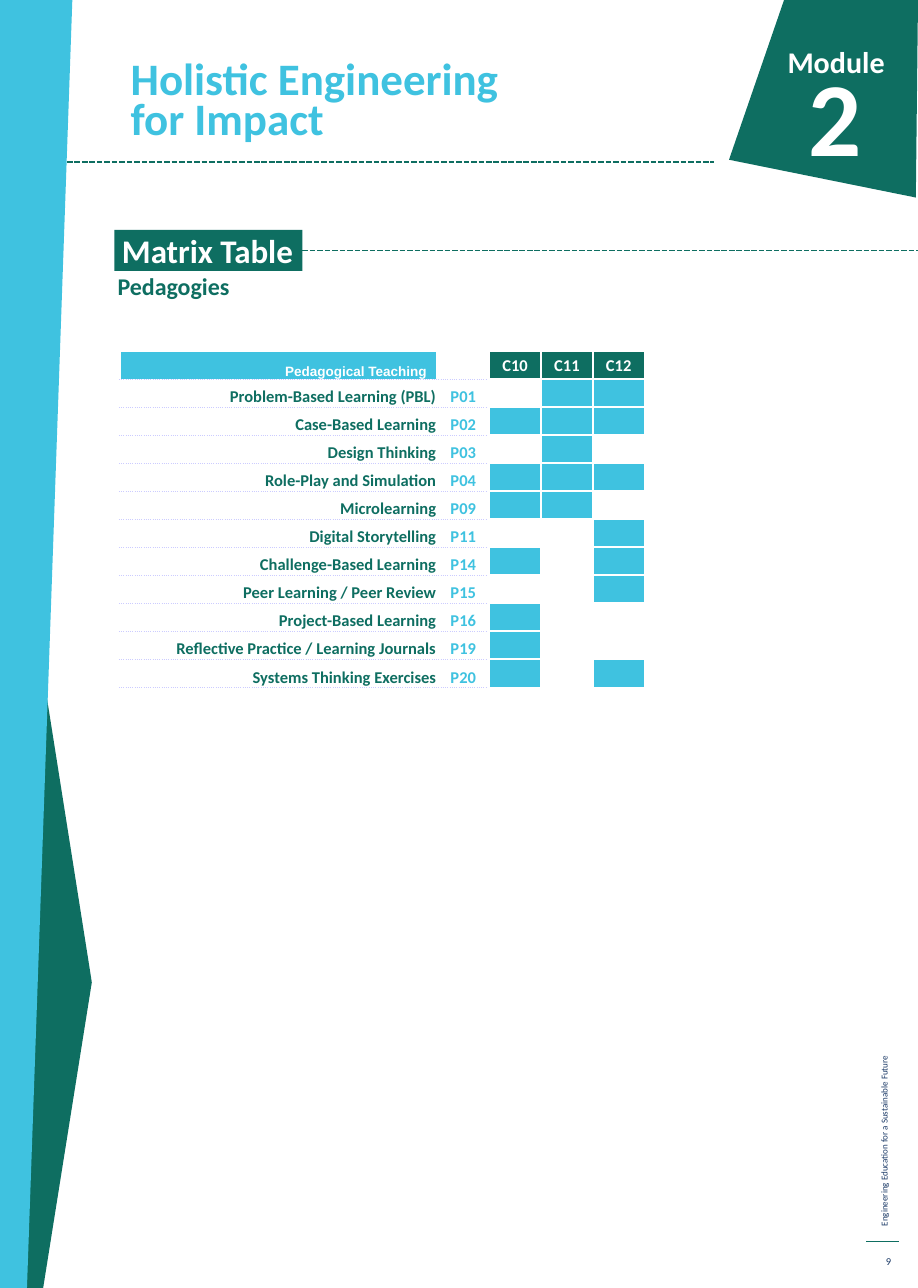
from lxml import etree
from pptx import Presentation
from pptx.dml.color import RGBColor
from pptx.enum.dml import MSO_LINE
from pptx.enum.shapes import MSO_CONNECTOR, MSO_SHAPE
from pptx.enum.text import MSO_ANCHOR, MSO_AUTO_SIZE, PP_ALIGN
from pptx.oxml.ns import qn
from pptx.util import Inches, Pt

GREEN = RGBColor(0x0E, 0x6E, 0x61)
BLUE = RGBColor(0x3F, 0xC2, 0xE0)
NAVY = RGBColor(0x1A, 0x39, 0x66)
WHITE = RGBColor(0xFF, 0xFF, 0xFF)
LILAC = RGBColor(0xCC, 0xCC, 0xFF)

LEFT, CENTER, RIGHT = PP_ALIGN.LEFT, PP_ALIGN.CENTER, PP_ALIGN.RIGHT
TOP, MIDDLE, BOTTOM = MSO_ANCHOR.TOP, MSO_ANCHOR.MIDDLE, MSO_ANCHOR.BOTTOM
NO_AUTOFIT = MSO_AUTO_SIZE.NONE
STRAIGHT = MSO_CONNECTOR.STRAIGHT
RECTANGLE = MSO_SHAPE.RECTANGLE
SHORT_DASH = MSO_LINE.SQUARE_DOT
RIGHT_SIDE = 3

COURSES = ["C10", "C11", "C12"]
PEDAGOGIES = [
    ("Problem-Based Learning (PBL)", "P01", ["C11", "C12"]),
    ("Case-Based Learning", "P02", ["C10", "C11", "C12"]),
    ("Design Thinking", "P03", ["C11"]),
    ("Role-Play and Simulation", "P04", ["C10", "C11", "C12"]),
    ("Microlearning", "P09", ["C10", "C11"]),
    ("Digital Storytelling", "P11", ["C12"]),
    ("Challenge-Based Learning", "P14", ["C10", "C12"]),
    ("Peer Learning / Peer Review", "P15", ["C12"]),
    ("Project-Based Learning", "P16", ["C10"]),
    ("Reflective Practice / Learning Journals", "P19", ["C10"]),
    ("Systems Thinking Exercises", "P20", ["C10", "C12"]),
]
COLUMN_WIDTHS = [2.94, 0.48, 0.48, 0.48, 0.48]
ROW_HEIGHT = 0.26


class Page:
    font = "Calibri"

    def __init__(self, deck):
        self.slide = deck.slides.add_slide(deck.slide_layouts[5])
        self.shapes = self.slide.shapes

    def set_text(self, frame, text, size, color, align=LEFT, bold=True, spacing=None, font=None):
        frame.text = text
        para = frame.paragraphs[0]
        para.alignment = align
        if spacing:
            para.line_spacing = spacing
        for span in para.runs:
            span.font.name = font or self.font
            span.font.size = Pt(size)
            span.font.bold = bold
            span.font.color.rgb = color

    def title(self, area, text, size, color, spacing):
        box = self.shapes.title
        box.left, box.top, box.width, box.height = map(Inches, area)
        frame = box.text_frame
        frame.word_wrap = True
        frame.auto_size = NO_AUTOFIT
        frame.vertical_anchor = BOTTOM
        self.set_text(frame, text, size, color, spacing=spacing)

    def text(self, area, text, size, color, anchor=TOP, **style):
        box = self.shapes.add_textbox(*map(Inches, area))
        box.text_frame.word_wrap = True
        box.text_frame.vertical_anchor = anchor
        self.set_text(box.text_frame, text, size, color, **style)
        return box

    def paint(self, shape, color):
        shape.shadow.inherit = False
        shape.fill.solid()
        shape.fill.fore_color.rgb = color
        shape.line.fill.background()

    def polygon(self, points, color):
        corners = [(Inches(x), Inches(y)) for x, y in points]
        builder = self.shapes.build_freeform(*corners[0], scale=1.0)
        builder.add_line_segments(corners[1:], close=True)
        self.paint(builder.convert_to_shape(), color)

    def label(self, area, text, size, fill, color):
        box = self.shapes.add_shape(RECTANGLE, *map(Inches, area))
        self.paint(box, fill)
        frame = box.text_frame
        frame.margin_left = frame.margin_right = Inches(0.07)
        frame.margin_top = frame.margin_bottom = 0
        frame.vertical_anchor = MIDDLE
        frame.word_wrap = True
        self.set_text(frame, text, size, color)
        return box

    def line(self, x1, x2, y, weight, dash=None):
        connector = self.shapes.add_connector(STRAIGHT, *map(Inches, (x1, y, x2, y)))
        connector.line.color.rgb = GREEN
        connector.line.width = Pt(weight)
        if dash:
            connector.line.dash_style = dash
        etree.SubElement(connector._element.spPr, qn("a:effectLst"))
        return connector

    def borders(self, cell, dotted_sides):
        """Rule the given sides in fine lilac dots and the others in white."""
        properties = cell._tc.get_or_add_tcPr()
        for index, side in enumerate("LRTB"):
            dotted = side in dotted_sides
            edge = etree.Element(qn("a:ln" + side), w=str(Pt(0.5 if dotted else 1.5)))
            fill = etree.SubElement(edge, qn("a:solidFill"))
            etree.SubElement(fill, qn("a:srgbClr"), val=str(LILAC if dotted else WHITE))
            etree.SubElement(edge, qn("a:prstDash"), val="sysDot" if dotted else "solid")
            properties.insert(index, edge)

    def cell(self, cell, fill, dotted_sides="", text="", anchor=BOTTOM, **style):
        cell.margin_left = cell.margin_right = cell.margin_top = Inches(0.01)
        cell.margin_bottom = 0
        cell.vertical_anchor = anchor
        cell.fill.solid()
        cell.fill.fore_color.rgb = fill
        self.borders(cell, dotted_sides)
        if text:
            self.set_text(cell.text_frame, text, **style)
        else:
            para = cell.text_frame.paragraphs[0]
            etree.SubElement(para._p, qn("a:endParaRPr"), sz="800")

    def matrix(self, left, top):
        row_count = len(PEDAGOGIES) + 1
        area = (left, top, sum(COLUMN_WIDTHS), ROW_HEIGHT * row_count)
        table = self.shapes.add_table(row_count, len(COLUMN_WIDTHS), *map(Inches, area)).table
        table.first_row = table.horz_banding = False
        for column, width in zip(table.columns, COLUMN_WIDTHS):
            column.width = Inches(width)
        for row in table.rows:
            row.height = Inches(ROW_HEIGHT)

        heading = table.cell(0, 0)
        self.cell(heading, BLUE, "B", "Pedagogical Teaching",
                  size=9, color=WHITE, align=RIGHT, font="Arial")
        heading.margin_right = Inches(0.1)
        self.cell(table.cell(0, 1), WHITE, "B")
        for column, course in enumerate(COURSES, 2):
            self.cell(table.cell(0, column), GREEN, "", course, MIDDLE,
                      size=11, color=WHITE, align=CENTER)
        for row, (name, code, used_in) in enumerate(PEDAGOGIES, 1):
            self.cell(table.cell(row, 0), WHITE, "TB", name,
                      size=11, color=GREEN, align=RIGHT)
            self.cell(table.cell(row, 1), WHITE, "TB", code,
                      size=11, color=BLUE, align=CENTER)
            for column, course in enumerate(COURSES, 2):
                self.cell(table.cell(row, column), BLUE if course in used_in else WHITE)


def main():
    deck = Presentation()
    deck.slide_width, deck.slide_height = Inches(8.5), Inches(11.93)
    page = Page(deck)

    page.polygon([(0.4, 11.93), (0.23, 11.93), (0.23, 5.17), (0.83, 8.97), (0.85, 9.1)], GREEN)
    page.polygon([(0, 0), (0.67, 0), (0.25, 11.93), (0, 11.93)], BLUE)
    page.polygon([(8.5, 0), (7.26, 0), (6.75, 1.48), (8.48, 1.83)], GREEN)

    page.title((1.11, 0.29, 3.8, 1.1), "Holistic Engineering for Impact", 30, BLUE, Pt(26.8))
    page.line(0.62, 6.61, 1.5, 1.25, SHORT_DASH)
    page.text((6.49, 0.35, 1.8, 0.45), "Module", 20, WHITE, align=RIGHT)
    page.text((6.28, 0.43, 1.8, 1.42), "2", 70, WHITE, align=RIGHT)

    section = page.label((1.06, 2.13, 1.74, 0.38), "Matrix Table", 22, GREEN, WHITE)
    rule = page.line(2.8, 8.5, 2.32, 1.25, SHORT_DASH)
    rule.begin_connect(section, RIGHT_SIDE)
    page.text((0.99, 2.5, 4.32, 0.34), "Pedagogies", 16, GREEN, spacing=0.9)
    page.matrix(1.11, 3.25)

    footer = page.text((5.94, 9.11, 4.49, 0.2), "Engineering Education for a Sustainable Future",
                       6, NAVY, bold=False)
    footer.rotation = 270
    page.line(8.02, 8.32, 11.5, 0.75)
    page.text((8.02, 11.54, 0.33, 0.29), "9", 7, NAVY, MIDDLE, align=RIGHT, bold=False)

    deck.save("out.pptx")


if __name__ == "__main__":
    main()
